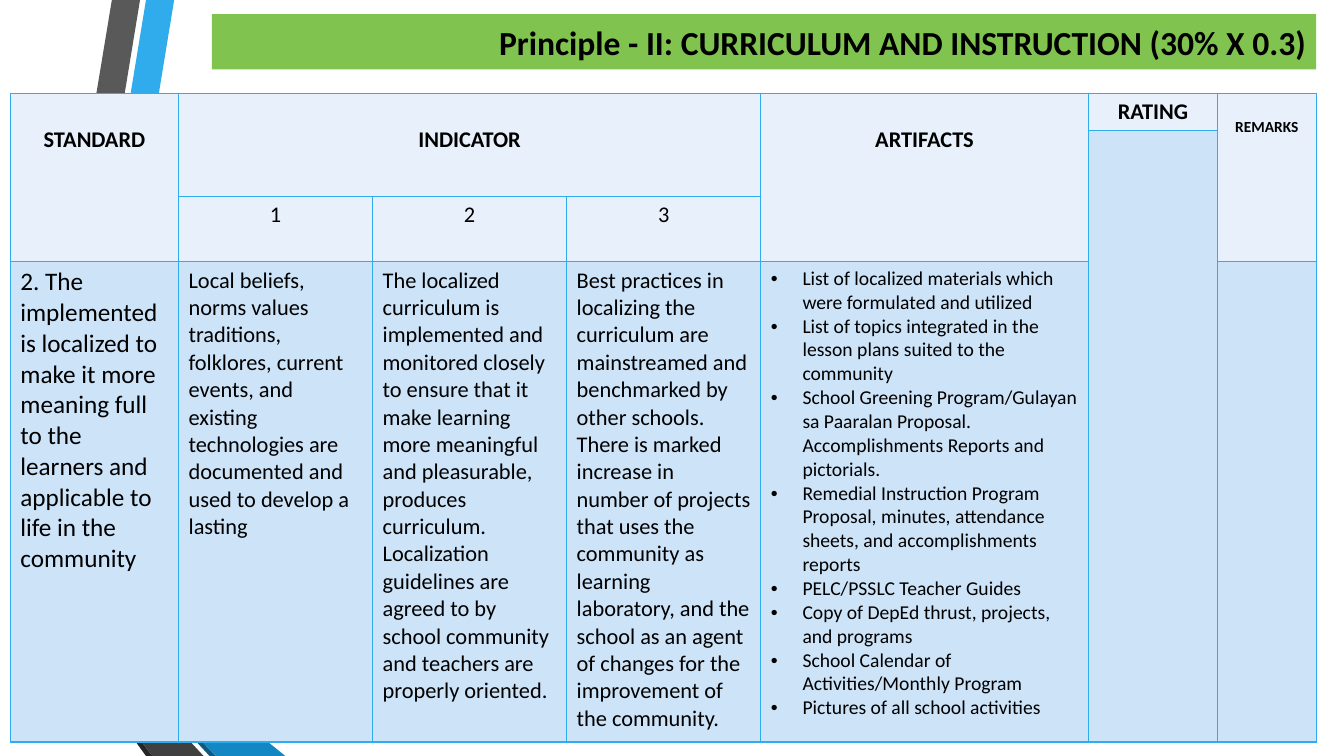
from lxml.etree import SubElement
from pptx import Presentation
from pptx.dml.color import RGBColor
from pptx.enum.shapes import MSO_SHAPE
from pptx.enum.text import MSO_ANCHOR, PP_ALIGN
from pptx.oxml.ns import qn
from pptx.util import Cm, Pt

COLORS = {
    "title": "80C34F", "text": "000000", "border": "30ACEC",
    "head": "E8F1FB", "body": "CDE3F8",
    "blue": "30ACEC", "blue_mid": "1287C3", "blue_dark": "0C5A82",
    "gray": "595959", "gray_mid": "404040", "gray_dark": "262626",
}
FONT = "Calibri"

TITLE = "Principle - II: CURRICULUM AND INSTRUCTION (30% X 0.3)"
ARTIFACTS = [
    "List of localized materials which were formulated and utilized",
    "List of topics integrated in the lesson plans suited to the community",
    "School Greening Program/Gulayan sa Paaralan Proposal. "
    "Accomplishments Reports and pictorials.",
    "Remedial Instruction Program Proposal, minutes, attendance sheets, "
    "and accomplishments reports",
    "PELC/PSSLC Teacher Guides",
    "Copy of DepEd thrust, projects, and programs",
    "School Calendar of Activities/Monthly Program",
    "Pictures of all school activities",
]

# Text formats of the table cells
HEADING = dict(size=16, bold=True, align=PP_ALIGN.CENTER, spacing=2)
RATING = dict(size=16, bold=True, align=PP_ALIGN.CENTER)
REMARKS = dict(HEADING, size=11)
LEVEL = dict(size=16, align=PP_ALIGN.CENTER)
STANDARD = dict(size=18)
INDICATOR = dict(size=16)
ARTIFACT = dict(size=14, bullet=True)

# Row, column, rows spanned, columns spanned, fill, lines, format
CELLS = [
    (0, 0, 3, 1, "head", ["STANDARD"], HEADING),
    (0, 1, 2, 3, "head", ["INDICATOR"], HEADING),
    (0, 4, 3, 1, "head", ["ARTIFACTS"], HEADING),
    (0, 5, 1, 1, "head", ["RATING"], RATING),
    (0, 6, 3, 1, "head", ["REMARKS"], REMARKS),
    (1, 5, 3, 1, "body", [], {}),
    (2, 1, 1, 1, "head", ["1"], LEVEL),
    (2, 2, 1, 1, "head", ["2"], LEVEL),
    (2, 3, 1, 1, "head", ["3"], LEVEL),
    (3, 0, 1, 1, "body", [
        "2. The implemented is localized to make it more meaning full to the "
        "learners and applicable to life in the community"], STANDARD),
    (3, 1, 1, 1, "body", [
        "Local beliefs, norms values traditions, folklores, current events, "
        "and existing technologies are documented and used to develop a "
        "lasting"], INDICATOR),
    (3, 2, 1, 1, "body", [
        "The localized curriculum is implemented and monitored closely to "
        "ensure that it make learning more meaningful and pleasurable, "
        "produces curriculum. Localization guidelines are agreed to by school "
        "community and teachers are properly oriented."], INDICATOR),
    (3, 3, 1, 1, "body", [
        "Best practices in localizing the curriculum are mainstreamed and "
        "benchmarked by other schools. There is marked increase in number of "
        "projects that uses the community as learning laboratory, and the "
        "school as an agent of changes for the improvement of the "
        "community."], INDICATOR),
    (3, 4, 1, 1, "body", ARTIFACTS, ARTIFACT),
    (3, 6, 1, 1, "body", [], {}),
]
COLUMN_WIDTHS = [4.24, 4.89, 4.89, 4.89, 8.26, 3.25, 2.49]
ROW_HEIGHTS = [0.92, 1.65, 1.65, 12.1]

# Folded ribbons behind the table: colour and corners in cm
RIBBONS = [
    ("blue", [(1.27, 14.68), (1.96, 14.81), (4.39, 0), (3.68, 0)]),
    ("gray", [(3.53, 0), (2.82, 0), (0.41, 14.55), (1.12, 14.66)]),
    ("gray_dark", [(0.41, 14.55), (3.68, 19.05), (3.84, 19.05)]),
    ("blue_dark", [(1.27, 14.71), (5.28, 19.05), (5.44, 19.05)]),
    ("blue_mid", [(1.27, 14.68), (5.44, 19.05), (7.19, 19.05), (1.96, 14.81)]),
    ("gray_mid", [(5.13, 19.05), (1.22, 14.81), (1.12, 14.66), (0.41, 14.55),
                  (3.84, 19.05)]),
]


def paint(target, color):
    target.fill.solid()
    target.fill.fore_color.rgb = RGBColor.from_string(COLORS[color])


def write(frame, lines, size=16, bold=False, align=PP_ALIGN.LEFT, spacing=1,
          bullet=False):
    frame.word_wrap = True
    for number, line in enumerate(lines):
        paragraph = frame.add_paragraph() if number else frame.paragraphs[0]
        paragraph.alignment = align
        paragraph.line_spacing = float(spacing)
        run = paragraph.add_run()
        run.text = line
        run.font.name = FONT
        run.font.size = Pt(size)
        run.font.bold = bold
        run.font.color.rgb = RGBColor.from_string(COLORS["text"])
        if bullet:
            properties = paragraph._p.get_or_add_pPr()
            properties.set("marL", str(Cm(0.8)))
            properties.set("indent", str(-Cm(0.8)))
            SubElement(properties, qn("a:buFont"), typeface="Arial")
            SubElement(properties, qn("a:buChar"), char="•")


def add_borders(cell):
    properties = cell._tc.get_or_add_tcPr()
    for side in ("a:lnL", "a:lnR", "a:lnT", "a:lnB"):
        line = SubElement(properties, qn(side), w=str(Pt(1)))
        fill = SubElement(line, qn("a:solidFill"))
        SubElement(fill, qn("a:srgbClr"), val=COLORS["border"])


def main():
    deck = Presentation()
    deck.slide_width, deck.slide_height = Cm(33.87), Cm(19.05)
    shapes = deck.slides.add_slide(deck.slide_layouts[6]).shapes

    # Ribbons
    for color, corners in RIBBONS:
        points = [(Cm(x), Cm(y)) for x, y in corners]
        builder = shapes.build_freeform(*points[0])
        builder.add_line_segments(points[1:], close=True)
        ribbon = builder.convert_to_shape()
        paint(ribbon, color)
        ribbon.line.fill.background()
        ribbon.shadow.inherit = False

    # Title bar
    title = shapes.add_shape(MSO_SHAPE.RECTANGLE, Cm(5.34), Cm(0.36),
                             Cm(27.83), Cm(1.39))
    paint(title, "title")
    title.line.fill.background()
    title.shadow.inherit = False
    title.text_frame.vertical_anchor = MSO_ANCHOR.MIDDLE
    write(title.text_frame, [TITLE], size=24, bold=True, align=PP_ALIGN.RIGHT)

    # Table grid
    table = shapes.add_table(
        len(ROW_HEIGHTS), len(COLUMN_WIDTHS), Cm(0.26), Cm(2.35),
        Cm(sum(COLUMN_WIDTHS)), Cm(sum(ROW_HEIGHTS))).table
    table.first_row = table.horz_banding = False
    for column, width in zip(table.columns, COLUMN_WIDTHS):
        column.width = Cm(width)
    for row, height in zip(table.rows, ROW_HEIGHTS):
        row.height = Cm(height)
    for cell in table.iter_cells():
        add_borders(cell)

    # Table content
    for row, column, down, across, color, lines, style in CELLS:
        cell = table.cell(row, column)
        if down * across > 1:
            cell.merge(table.cell(row + down - 1, column + across - 1))
        paint(cell, color)
        write(cell.text_frame, lines, **style)

    deck.save("out.pptx")


if __name__ == "__main__":
    main()
